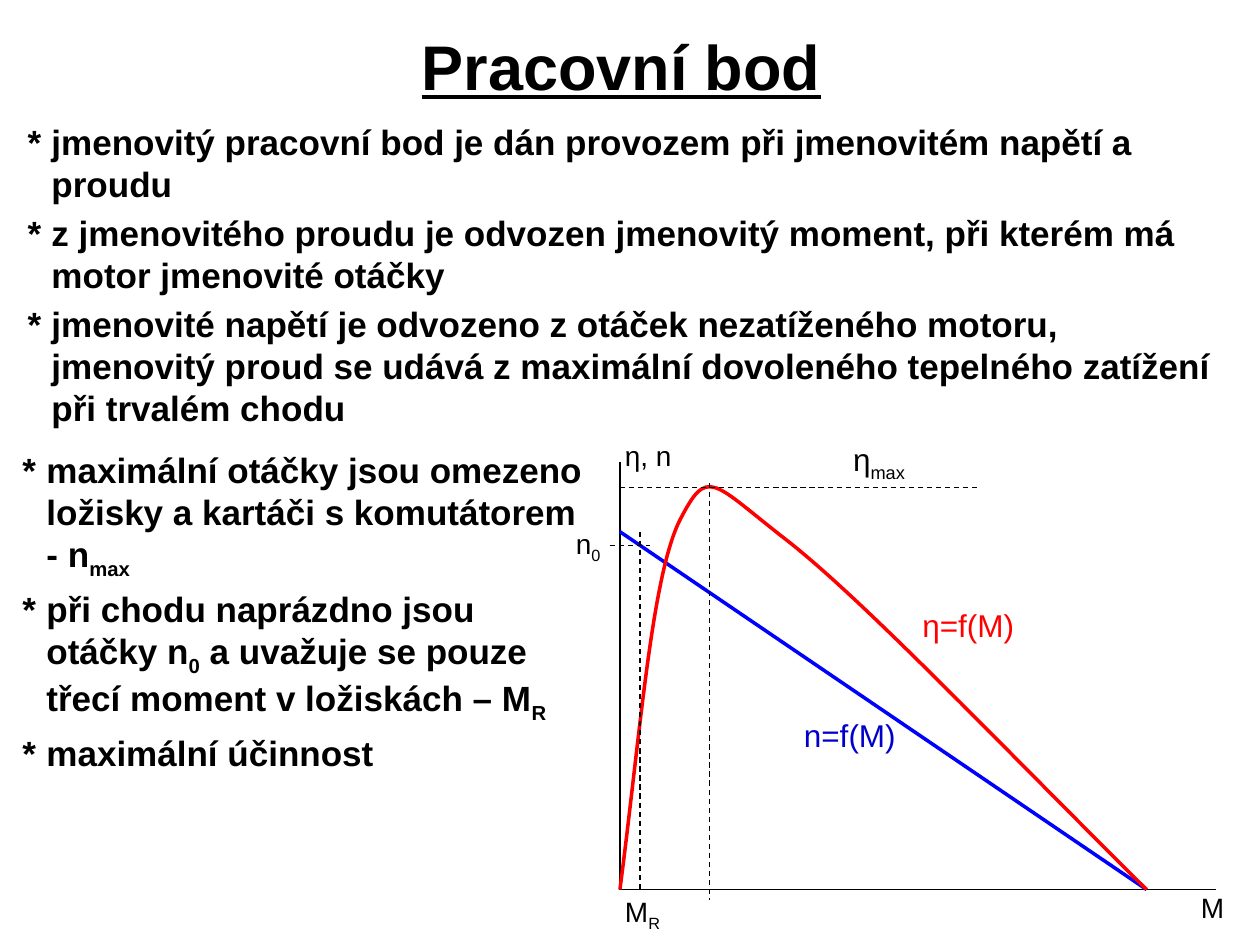
"""Build the slide on the motor operating point with its characteristic curves."""
import pptx
import pptx.dml.color
import pptx.enum.dml
import pptx.enum.shapes
import pptx.enum.text
import pptx.oxml
import pptx.oxml.ns
import pptx.util
from pptx.util import Inches

BLACK, RED, BLUE, DARK_BLUE = "000000", "FF0000", "0000FF", "0000CC"
BODY_FORMAT = {"size": pptx.util.Pt(20), "bold": True}
TITLE_FORMAT = {"size": pptx.util.Pt(36), "bold": True, "underline": True}

# Text between bars is subscript.
TITLE = "Pracovní bod"
BODIES = [
    ((0.12, 0.91, 9.61, 2.57), [
        "jmenovitý pracovní bod je dán provozem při jmenovitém napětí a proudu",
        "z jmenovitého proudu je odvozen jmenovitý moment, při kterém má motor jmenovité otáčky",
        "jmenovité napětí je odvozeno z otáček nezatíženého motoru, jmenovitý proud se udává "
        "z maximální dovoleného tepelného zatížení při trvalém chodu",
    ]),
    ((0.08, 3.51, 4.69, 2.57), [
        "maximální otáčky jsou omezeno ložisky a kartáči s komutátorem - n|max|",
        "při chodu naprázdno jsou otáčky n|0| a uvažuje se pouze třecí moment v ložiskách – M|R|",
        "maximální účinnost",
    ]),
]
LABELS = [
    ("η|max|", (6.73, 3.45, 0.79, 0.38), 18, BLACK),
    ("M", (9.49, 7.03, 0.31, 0.35), 16, BLACK),
    ("η, n", (4.92, 3.44, 0.47, 0.35), 16, BLACK),
    ("η=f(M)", (7.28, 4.77, 0.87, 0.38), 18, RED),
    ("n=f(M)", (6.34, 5.64, 0.87, 0.38), 18, DARK_BLUE),
    ("M|R|", (4.92, 7.06, 0.55, 0.35), 16, BLACK),
    ("n|0|", (4.53, 4.14, 0.32, 0.35), 16, BLACK),
]
LEFT, BASE, STALL = 4.92, 7.06, 9.1
AXES = [(LEFT, 3.67), (LEFT, BASE), (9.65, BASE)]
SPEED_LINE = (LEFT, 4.22, STALL, BASE)
EFFICIENCY_CURVE = [
    (LEFT, BASE), (5.08, 5.84), (5.17, 4.6), (5.39, 4.14), (5.62, 3.69),
    (5.64, 3.82), (6.26, 4.3), (6.88, 4.79), (7.95, 5.92), (STALL, BASE),
]
GUIDES = [
    (5.63, 3.83, 5.63, 7.14),
    (LEFT, 3.87, 7.76, 3.87),
    (5.08, 4.22, 5.08, BASE),
    (4.84, 4.33, 5.16, 4.33),
]


def color(value):
    return pptx.dml.color.RGBColor.from_string(value)


def apply(target, values):
    for name, value in values.items():
        setattr(target, name, value)


def add_text(shapes, box, lines, font, fill=BLACK, frame=None, paragraph_format=None, hanging=False):
    text_frame = shapes.add_textbox(*map(Inches, box)).text_frame
    apply(text_frame, {"word_wrap": True, **(frame or {})})
    for index, line in enumerate(lines):
        paragraph = text_frame.add_paragraph() if index else text_frame.paragraphs[0]
        apply(paragraph, paragraph_format or {})
        if index:
            paragraph.space_before = pptx.util.Pt(4)
        if hanging:
            properties = paragraph._p.get_or_add_pPr()
            properties.set("marL", str(Inches(0.19)))
            properties.set("indent", str(-Inches(0.19)))
            line = "*\t" + line
        for position, part in enumerate(line.split("|")):
            if part:
                run = paragraph.add_run()
                run.text = part
                apply(run.font, {"name": "Arial", **font})
                run.font.color.rgb = color(fill)
                if position % 2:
                    run._r.get_or_add_rPr().set("baseline", "-25000")


def style_line(shape, stroke, width):
    shape.line.color.rgb = color(stroke)
    shape.line.width = pptx.util.Pt(width)


def add_line(shapes, ends, stroke, width, dashed=False):
    connector = shapes.add_connector(
        pptx.enum.shapes.MSO_CONNECTOR.STRAIGHT, *map(Inches, ends))
    style_line(connector, stroke, width)
    if dashed:
        connector.line.dash_style = pptx.enum.dml.MSO_LINE.DASH
    connector._element.spPr.append(pptx.oxml.parse_xml(
        f"<a:effectLst {pptx.oxml.ns.nsdecls('a')}/>"))


def add_outline(shapes, points, stroke, width, curved=False):
    start, *rest = [tuple(map(Inches, point)) for point in points]
    builder = shapes.build_freeform(*start)
    builder.add_line_segments(rest, close=False)
    shape = builder.convert_to_shape()
    shape.fill.background()
    shape.shadow.inherit = False
    style_line(shape, stroke, width)
    if curved:
        segments = shape._element.findall(".//" + pptx.oxml.ns.qn("a:lnTo"))
        for first in range(0, len(segments), 3):
            bezier = pptx.oxml.parse_xml(f"<a:cubicBezTo {pptx.oxml.ns.nsdecls('a')}/>")
            segments[first].addprevious(bezier)
            for segment in segments[first:first + 3]:
                bezier.append(segment[0])
                segment.getparent().remove(segment)


def main():
    presentation = pptx.Presentation()
    apply(presentation, {"slide_width": Inches(10), "slide_height": Inches(7.5)})
    slide = presentation.slides.add_slide(presentation.slide_layouts[6])
    add_text(slide.shapes, (0.43, 0.13, 9, 0.77), [TITLE], TITLE_FORMAT,
             frame={"vertical_anchor": pptx.enum.text.MSO_ANCHOR.MIDDLE},
             paragraph_format={"alignment": pptx.enum.text.PP_ALIGN.CENTER})
    for box, lines in BODIES:
        add_text(slide.shapes, box, lines, BODY_FORMAT, hanging=True)

    diagram = slide.shapes.add_group_shape().shapes
    add_outline(diagram, AXES, BLACK, 0.75)
    add_line(diagram, SPEED_LINE, BLUE, 2)
    add_outline(diagram, EFFICIENCY_CURVE, RED, 2, curved=True)
    for guide in GUIDES:
        add_line(diagram, guide, BLACK, 0.75, dashed=True)
    sides = ("left", "top", "right", "bottom")
    margins = {f"margin_{side}": Inches(0.04) for side in sides}
    for text, box, size, fill in LABELS:
        add_text(diagram, box, [text], {"size": pptx.util.Pt(size)}, fill, margins)
    presentation.save("out.pptx")


if __name__ == "__main__":
    main()
